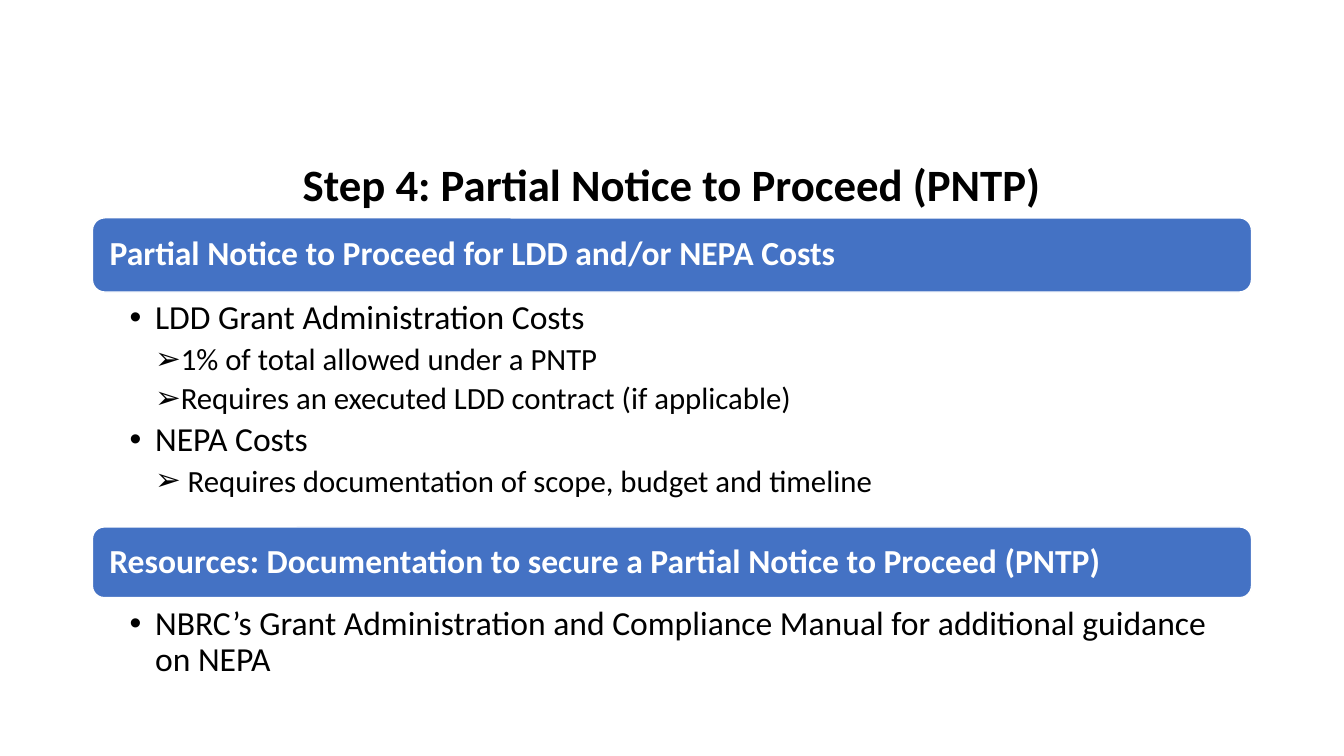
from lxml.etree import SubElement as Sub
from pptx import Presentation
from pptx.dml.color import RGBColor as Rgb
from pptx.enum.shapes import MSO_SHAPE as Shape
from pptx.enum.text import MSO_ANCHOR as Anchor, MSO_AUTO_SIZE as Auto, PP_ALIGN as Align
from pptx.oxml.ns import qn
from pptx.util import Cm, Pt

HEX = {"blue": "4472C4", "white": "FFFFFF", "black": "000000"}
LEFT, WIDE = 2.33, 29.21
STEP = 0.64
MARKS = {1: ("•", 24), 2: ("➢", 22)}
PARTS = [
    ("Partial Notice to Proceed for LDD and/or NEPA Costs", 5.49, 1.87, 4.01, [
        (1, "LDD Grant Administration Costs"),
        (2, "1% of total allowed under a PNTP"),
        (2, "Requires an executed LDD contract (if applicable)"),
        (1, "NEPA Costs"),
        (2, " Requires documentation of scope, budget and timeline"),
    ]),
    ("Resources: Documentation to secure a Partial Notice to Proceed (PNTP)", 13.28, 1.78, 2.41, [
        (1, "NBRC’s Grant Administration and Compliance Manual for additional guidance on NEPA"),
    ]),
]


def color(name):
    return Rgb.from_string(HEX[name])


def write(para, text, size=24, bold=False, ink="black", align=Align.LEFT,
          lines=0.9, after=0, level=0):
    para.alignment = align
    para.line_spacing = lines
    para.space_before = Pt(0)
    para.space_after = Pt(after)
    para.level = level
    if level:
        props = para._p.get_or_add_pPr()
        props.set("marL", str(Cm(STEP * level)))
        props.set("indent", str(-Cm(STEP)))
        Sub(props, qn("a:buFont"), typeface="Arial")
        Sub(props, qn("a:buChar"), char=MARKS[level][0])
    run = para.add_run()
    run.text = text
    font = run.font
    font.name, font.size, font.bold = "Calibri", Pt(size), bold
    font.color.rgb = color(ink)


def inset(frame, left, right, edge):
    frame.word_wrap = True
    frame.margin_left, frame.margin_right = Cm(left), Cm(right)
    frame.margin_top = frame.margin_bottom = Cm(edge)


def head(slide, text, x, y, w, h):
    title = slide.shapes.title
    title.left, title.top, title.width, title.height = map(Cm, (x, y, w, h))
    frame = title.text_frame
    frame.auto_size = Auto.NONE
    frame.vertical_anchor = Anchor.MIDDLE
    write(frame.paragraphs[0], text, size=32, bold=True, align=Align.CENTER, lines=1.2)


def banner(slide, text, x, y, w, h):
    bar = slide.shapes.add_shape(Shape.ROUNDED_RECTANGLE, *map(Cm, (x, y, w, h)))
    bar.shadow.inherit = False
    bar.fill.solid()
    bar.fill.fore_color.rgb = color("blue")
    bar.line.color.rgb = color("white")
    bar.line.width = Pt(1)
    frame = bar.text_frame
    inset(frame, 0.34, 0.34, 0.25)
    frame.vertical_anchor = Anchor.MIDDLE
    write(frame.paragraphs[0], text, bold=True, ink="white")


def points(slide, items, x, y, w, h):
    frame = slide.shapes.add_textbox(*map(Cm, (x, y, w, h))).text_frame
    inset(frame, 0.94, 0.48, 0.08)
    for i, (level, text) in enumerate(items):
        para = frame.add_paragraph() if i else frame.paragraphs[0]
        size = MARKS[level][1]
        write(para, text, size=size, after=size * 0.2, level=level)


def main():
    deck = Presentation()
    deck.slide_width, deck.slide_height = Cm(33.87), Cm(19.05)
    slide = deck.slides.add_slide(deck.slide_layouts[5])
    head(slide, "Step 4: Partial Notice to Proceed (PNTP)", LEFT, 3.71, WIDE, 1.57)
    for text, top, bar, body, items in PARTS:
        banner(slide, text, LEFT, top, WIDE, bar)
        points(slide, items, LEFT, top + bar + 0.14, WIDE, body)
    deck.save("out.pptx")


if __name__ == "__main__":
    main()
